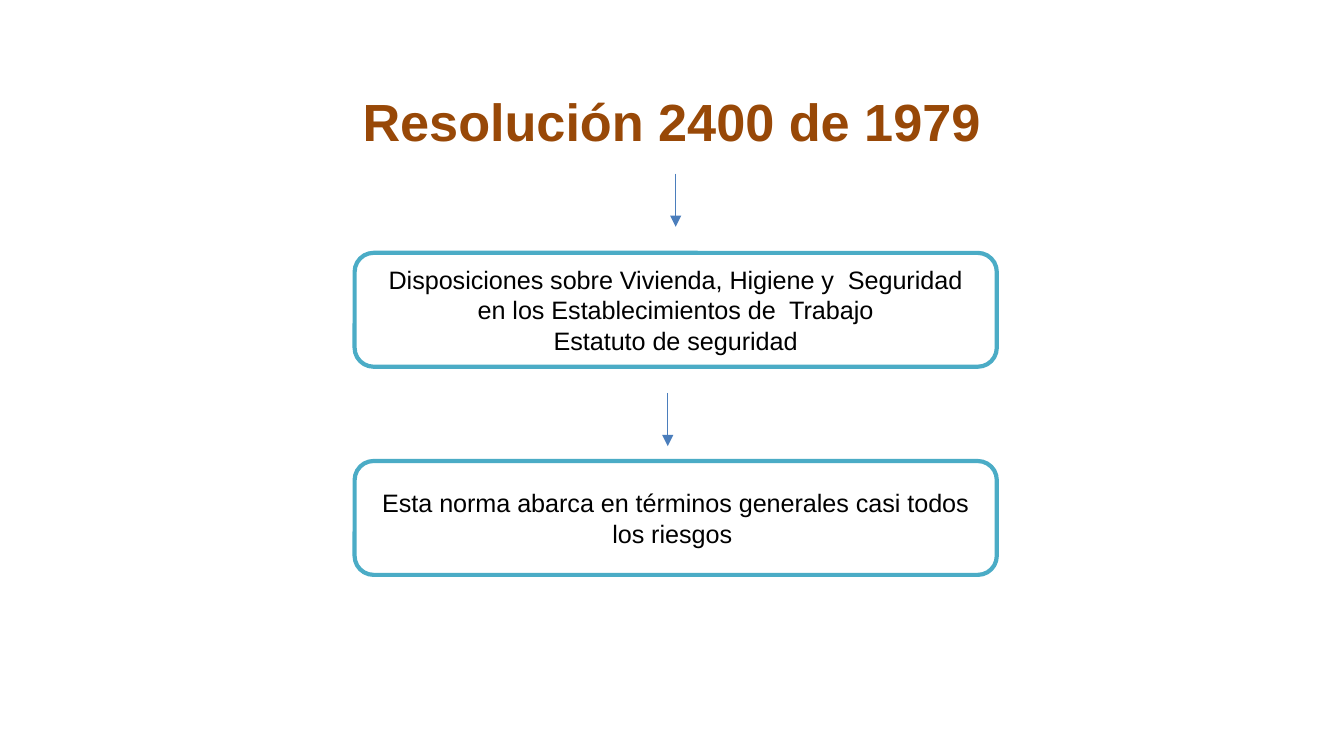
from dataclasses import dataclass

import pptx
import pptx.dml.color
import pptx.enum.shapes
import pptx.enum.text
import pptx.oxml.ns
import pptx.util
from lxml import etree

Pt = pptx.util.Pt
RGB = pptx.dml.color.RGBColor.from_string


@dataclass(frozen=True)
class Theme:
    face: str = "Arial"
    title: str = "984807"
    text: str = "000000"
    fill: str = "FFFFFF"
    edge: str = "4BACC6"
    arrow: str = "4B7EBC"
    head: float = 28
    body: float = 13.5


THEME = Theme()


def write(frame, lines, size, color, bold=False):
    """Fill a text frame with centred paragraphs."""
    frame.word_wrap = True
    frame.text = "\n".join(lines)
    for para in frame.paragraphs:
        para.alignment = pptx.enum.text.PP_ALIGN.CENTER
        para.font.name = THEME.face
        para.font.size = Pt(size)
        para.font.bold = bold
        para.font.color.rgb = RGB(color)


def add_title(slide, box, text):
    area = slide.shapes.add_textbox(*map(Pt, box))
    write(area.text_frame, [text], THEME.head, THEME.title, bold=True)


def add_card(slide, box, lines):
    kind = pptx.enum.shapes.MSO_SHAPE.ROUNDED_RECTANGLE
    card = slide.shapes.add_shape(kind, *map(Pt, box))
    card.shadow.inherit = False
    card.fill.solid()
    card.fill.fore_color.rgb = RGB(THEME.fill)
    card.line.color.rgb = RGB(THEME.edge)
    card.line.width = Pt(2.25)
    card.text_frame.vertical_anchor = pptx.enum.text.MSO_ANCHOR.MIDDLE
    write(card.text_frame, lines, THEME.body, THEME.text)


def add_arrow(slide, x, top, drop):
    """Draw a downward arrow of the given length."""
    kind = pptx.enum.shapes.MSO_CONNECTOR.STRAIGHT
    arrow = slide.shapes.add_connector(
        kind, Pt(x), Pt(top), Pt(x), Pt(top + drop))
    arrow.line.color.rgb = RGB(THEME.arrow)
    arrow.line.width = Pt(0.75)
    qn = pptx.oxml.ns.qn
    etree.SubElement(arrow.line._get_or_add_ln(), qn("a:tailEnd"),
                     type="triangle")
    etree.SubElement(arrow._element.spPr, qn("a:effectLst"))


def add_flow(slide, box):
    """Stack the title and two cards, with an arrow above each card."""
    left, top, width, height = box
    add_title(slide, (left, top, width, 41), "Resolución 2400 de 1979")

    cards = [
        (91, ["Disposiciones sobre Vivienda, Higiene y  Seguridad "
              "en los Establecimientos de  Trabajo",
              "Estatuto de seguridad"]),
        (202.5, ["Esta norma abarca en términos generales casi todos "
                 "los riesgos "]),
    ]
    for down, lines in cards:
        add_card(slide, (left + 42, top + down, 344, 61), lines)

    for across, down in [(214, 48.5), (209.75, 166)]:
        add_arrow(slide, left + across, top + down, 28.5)


def main():
    deck = pptx.Presentation()
    deck.slide_width, deck.slide_height = Pt(720), Pt(405)
    slide = deck.slides.add_slide(deck.slide_layouts[6])
    add_flow(slide, (148, 44.5, 423.5, 264.5))
    deck.save("out.pptx")


if __name__ == "__main__":
    main()
